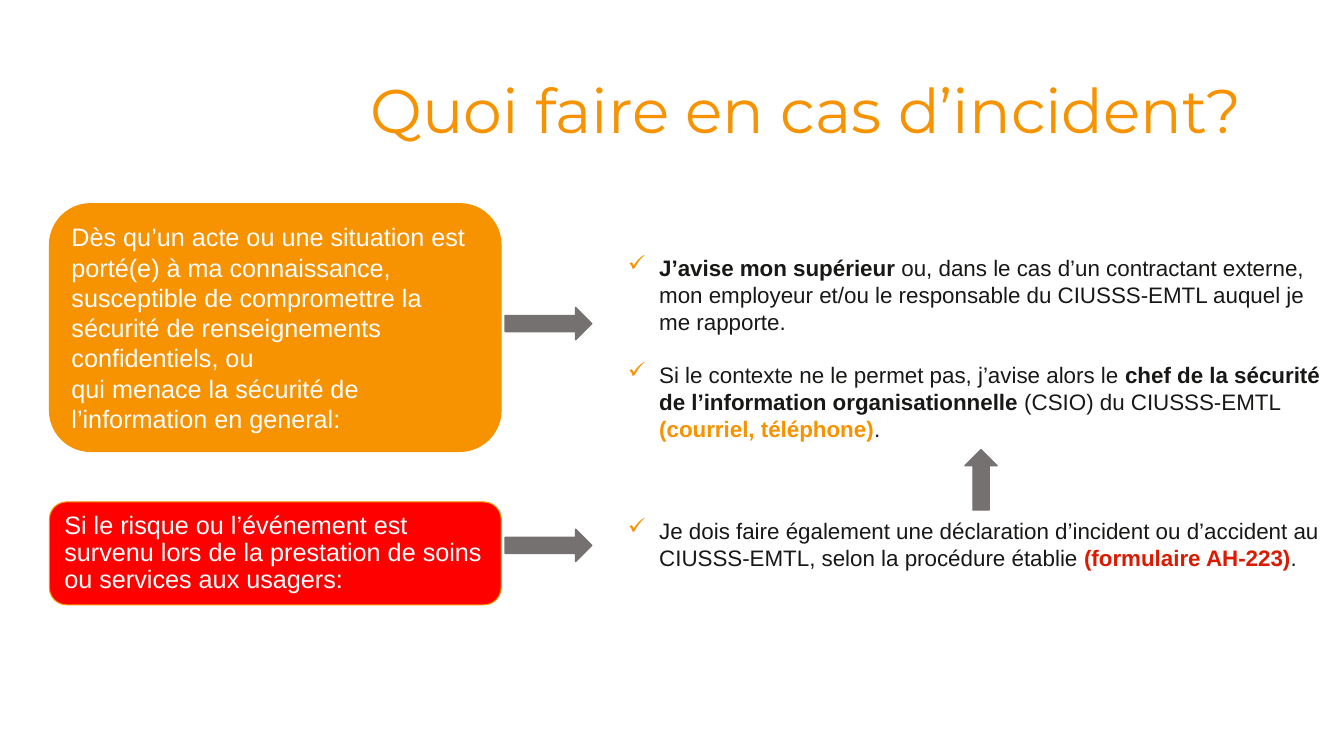
"""Build the slide on what to do when an information security incident occurs."""
from dataclasses import dataclass

from lxml.etree import SubElement
from pptx import Presentation
from pptx.dml.color import RGBColor
from pptx.enum.shapes import MSO_SHAPE
from pptx.enum.text import MSO_ANCHOR, PP_ALIGN
from pptx.oxml.ns import qn
from pptx.shapes.autoshape import Shape
from pptx.slide import Slide
from pptx.text.text import TextFrame, _Paragraph
from pptx.util import Emu, Pt

EMU_PER_PX = 9144
BULLET_INDENT = 31
COLORS = {
    "orange": "F79200",
    "red": "FF0000",
    "brick": "DB1A00",
    "gray": "767171",
    "ink": "181817",
    "white": "FFFFFF",
}


@dataclass(frozen=True)
class Area:
    left: int
    top: int
    width: int
    height: int


@dataclass(frozen=True)
class Span:
    text: str
    color: str = "ink"
    bold: bool = False


@dataclass(frozen=True)
class Situation:
    area: Area
    fill: str
    paras: tuple[str, ...]
    line_spacing: float = 1.0


@dataclass(frozen=True)
class Checklist:
    area: Area
    items: tuple[tuple[Span, ...], ...]


@dataclass(frozen=True)
class Arrow:
    area: Area
    rotation: int = 0


SITUATIONS = (
    Situation(Area(49, 202, 448, 246), "orange", (
        "Dès qu’un acte ou une situation est porté(e) à ma connaissance, susceptible de "
        "compromettre la sécurité de renseignements confidentiels, ou",
        "qui menace la sécurité de l’information en general:",
    )),
    Situation(Area(49, 498, 448, 102), "red", (
        "Si le risque ou l’événement est survenu lors de la prestation de soins "
        "ou services aux usagers:",
    ), 0.9),
)
CHECKLISTS = (
    Checklist(Area(613, 247, 720, 199), (
        (
            Span("J’avise mon supérieur ", bold=True),
            Span("ou, dans le cas d’un contractant externe, mon employeur et/ou le "
                 "responsable du CIUSSS-EMTL auquel je me rapporte."),
        ),
        (
            Span("Si le contexte ne le permet pas, j’avise alors le "),
            Span("chef de la sécurité de l’information organisationnelle", bold=True),
            Span(" (CSIO) du CIUSSS-EMTL "),
            Span("(courriel, téléphone)", "orange", True),
            Span("."),
        ),
    )),
    Checklist(Area(613, 508, 719, 64), (
        (
            Span("Je dois faire également une déclaration d’incident ou d’accident au "
                 "CIUSSS-EMTL, selon la procédure établie "),
            Span("(formulaire AH-223)", "brick", True),
            Span("."),
        ),
    )),
)
ARROWS = (
    Arrow(Area(501, 305, 86, 32)),
    Arrow(Area(501, 525, 86, 32)),
    Arrow(Area(943, 460, 60, 32), 270),
)


def px(length: int) -> Emu:
    return Emu(length * EMU_PER_PX)


def place(area: Area) -> tuple[Emu, Emu, Emu, Emu]:
    return px(area.left), px(area.top), px(area.width), px(area.height)


def rgb(color: str) -> RGBColor:
    return RGBColor.from_string(COLORS[color])


def add_span(para: _Paragraph, span: Span, size: int, font: str = "Arial") -> None:
    run = para.add_run()
    run.text = span.text
    run.font.name = font
    run.font.size = Pt(size)
    run.font.bold = span.bold
    run.font.color.rgb = rgb(span.color)


def get_para(frame: TextFrame, index: int) -> _Paragraph:
    return frame.add_paragraph() if index else frame.paragraphs[0]


def add_check_mark(para: _Paragraph) -> None:
    properties = para._p.get_or_add_pPr()
    properties.set("marL", str(px(BULLET_INDENT)))
    properties.set("indent", str(-px(BULLET_INDENT)))
    color = SubElement(properties, qn("a:buClr"))
    SubElement(color, qn("a:srgbClr"), val=COLORS["orange"])
    SubElement(properties, qn("a:buChar"), char="✓")


def add_text_box(page: Slide, area: Area) -> TextFrame:
    frame = page.shapes.add_textbox(*place(area)).text_frame
    frame.word_wrap = True
    return frame


def add_block(page: Slide, kind: MSO_SHAPE, area: Area, fill: str, line: str,
              line_width: float) -> Shape:
    block = page.shapes.add_shape(kind, *place(area))
    block.shadow.inherit = False
    block.fill.solid()
    block.fill.fore_color.rgb = rgb(fill)
    block.line.color.rgb = rgb(line)
    block.line.width = Pt(line_width)
    return block


def add_title(page: Slide, text: str) -> None:
    frame = add_text_box(page, Area(194, 40, 1048, 145))
    frame.vertical_anchor = MSO_ANCHOR.MIDDLE
    para = frame.paragraphs[0]
    para.alignment = PP_ALIGN.RIGHT
    para.line_spacing = 0.9
    add_span(para, Span(text, "orange"), 44, "Montserrat")


def add_situation(page: Slide, situation: Situation) -> None:
    box = add_block(page, MSO_SHAPE.ROUNDED_RECTANGLE, situation.area,
                    situation.fill, "orange", 0.75)
    frame = box.text_frame
    frame.word_wrap = True
    frame.vertical_anchor = MSO_ANCHOR.MIDDLE
    for index, text in enumerate(situation.paras):
        para = get_para(frame, index)
        para.alignment = PP_ALIGN.LEFT
        para.line_spacing = situation.line_spacing
        add_span(para, Span(text, "white"), 18)


def add_checklist(page: Slide, checklist: Checklist) -> None:
    frame = add_text_box(page, checklist.area)
    for index, spans in enumerate(checklist.items):
        para = get_para(frame, index)
        if index:
            para.space_before = Pt(19)
        add_check_mark(para)
        for span in spans:
            add_span(para, span, 16)


def add_arrow(page: Slide, arrow: Arrow) -> None:
    block = add_block(page, MSO_SHAPE.RIGHT_ARROW, arrow.area, "gray", "gray", 1)
    block.rotation = arrow.rotation


def main() -> None:
    deck = Presentation()
    deck.slide_width, deck.slide_height = px(1333), px(750)
    page = deck.slides.add_slide(deck.slide_layouts[6])
    add_title(page, "Quoi faire en cas d’incident?")
    for situation in SITUATIONS:
        add_situation(page, situation)
    for checklist in CHECKLISTS:
        add_checklist(page, checklist)
    for arrow in ARROWS:
        add_arrow(page, arrow)
    deck.save("out.pptx")


if __name__ == "__main__":
    main()
